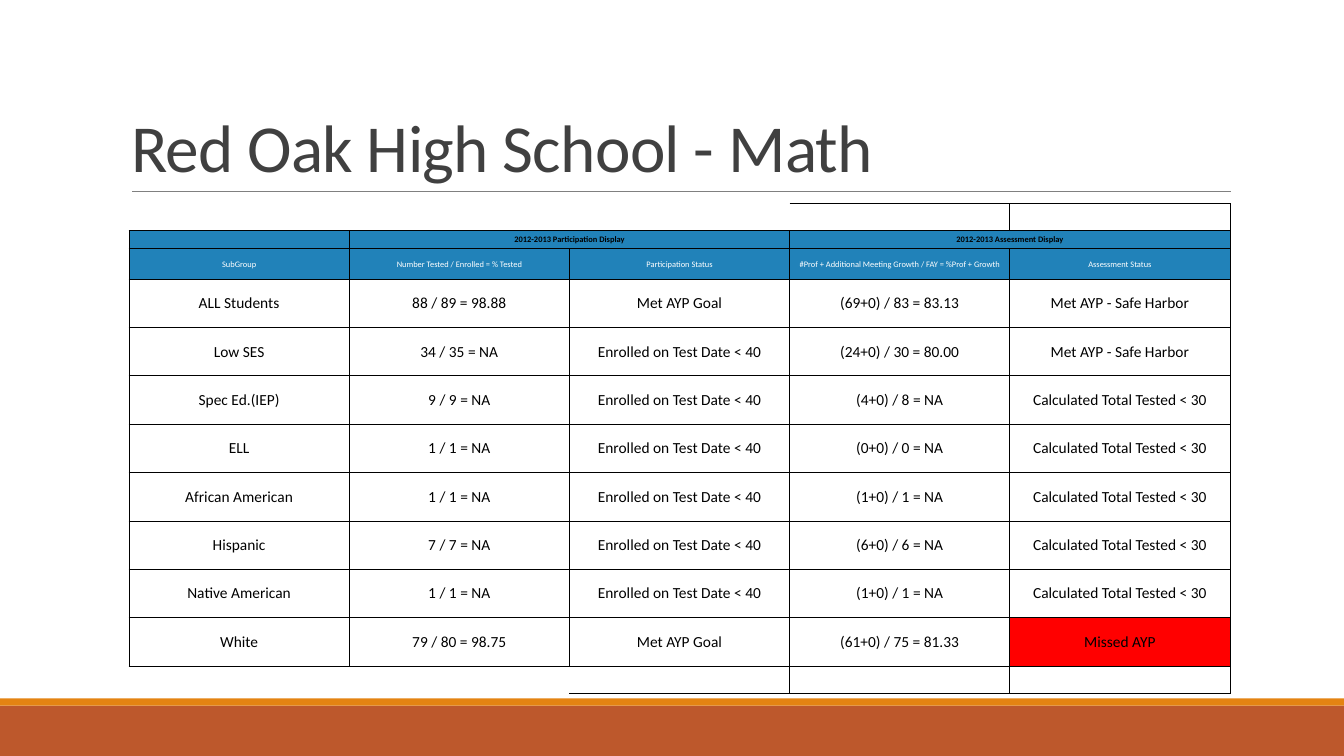
"""Build the Red Oak High School math results slide."""
import dataclasses
import typing

import lxml.etree
import pptx
import pptx.dml.color
import pptx.enum.shapes
import pptx.enum.text
import pptx.oxml.ns
import pptx.util

Inches = pptx.util.Inches
Pt = pptx.util.Pt
qn = pptx.oxml.ns.qn
ALIGN = pptx.enum.text.PP_ALIGN
ANCHOR = pptx.enum.text.MSO_ANCHOR

COLORS = {
    "rust": "BD582C", "orange": "E48312", "rule": "808080", "title": "404040",
    "header": "2182B9", "black": "000000", "white": "FFFFFF", "missed": "FF0000",
}
TITLE_FONT = {"name": "Calibri", "size": Pt(48), "bold": False}
GROUP_FONT = {"name": "Calibri", "size": Pt(6), "bold": True}
HEADER_FONT = {"name": "Calibri", "size": Pt(6), "bold": False}
BODY_FONT = {"name": "Calibri", "size": Pt(11), "bold": False}
TITLE_FRAME = {
    "word_wrap": True, "vertical_anchor": ANCHOR.BOTTOM,
    "auto_size": pptx.enum.text.MSO_AUTO_SIZE.NONE,
}
CELL_FORMAT = {
    "margin_left": Inches(0.06), "margin_right": Inches(0.06),
    "margin_top": Inches(0.03), "margin_bottom": Inches(0.03),
    "vertical_anchor": ANCHOR.MIDDLE,
}
NO_STYLE = "{2D5ABB26-0587-4C30-8999-92F81FD0307C}"
SMALL, TALL = 0.27, 0.48
FEW_ENROLLED = "Enrolled on Test Date < 40"
FEW_TESTED = "Calculated Total Tested < 30"
MET, HARBOR, MISSED = "Met AYP Goal", "Met AYP - Safe Harbor", "Missed AYP"


@dataclasses.dataclass(frozen=True)
class Bar:
    """A full-width footer band."""
    top: float
    height: float
    color: str


@dataclasses.dataclass(frozen=True)
class Row:
    """One table row with its shared format."""
    height: float
    texts: tuple[str, ...] = ("",) * 5
    font: dict[str, typing.Any] = dataclasses.field(default_factory=lambda: HEADER_FONT)
    color: str = "black"
    fill: str | None = None
    sides: tuple[str, ...] = ("LRTB",) * 5
    spans: tuple[tuple[int, int], ...] = ()


BARS = (Bar(7, 0.5, "rust"), Bar(6.93, 0.07, "orange"))
RESULTS = (
    ("ALL Students", "88 / 89 = 98.88", MET, "(69+0) / 83 = 83.13", HARBOR),
    ("Low SES", "34 / 35 = NA", FEW_ENROLLED, "(24+0) / 30 = 80.00", HARBOR),
    ("Spec Ed.(IEP)", "9 / 9 = NA", FEW_ENROLLED, "(4+0) / 8 = NA", FEW_TESTED),
    ("ELL", "1 / 1 = NA", FEW_ENROLLED, "(0+0) / 0 = NA", FEW_TESTED),
    ("African American", "1 / 1 = NA", FEW_ENROLLED, "(1+0) / 1 = NA", FEW_TESTED),
    ("Hispanic", "7 / 7 = NA", FEW_ENROLLED, "(6+0) / 6 = NA", FEW_TESTED),
    ("Native American", "1 / 1 = NA", FEW_ENROLLED, "(1+0) / 1 = NA", FEW_TESTED),
    ("White", "79 / 80 = 98.75", MET, "(61+0) / 75 = 81.33", MISSED),
)
ROWS = (
    Row(SMALL, sides=("B", "B", "B", "TB", "LRTB"), spans=((0, 2),)),
    Row(0.18, ("", "2012-2013 Participation Display", "", "2012-2013 Assessment Display", ""),
        GROUP_FONT, fill="header", spans=((1, 2), (3, 4))),
    Row(0.3, ("SubGroup", "Number Tested / Enrolled = % Tested", "Participation Status",
              "#Prof + Additional Meeting Growth / FAY = %Prof + Growth", "Assessment Status"),
        HEADER_FONT, "white", "header"),
    *(Row(TALL, texts, BODY_FONT, fill="white") for texts in RESULTS),
    Row(SMALL, sides=("T", "T", "RTB", "LRTB", "LRTB")),
)


def rgb(name: str) -> pptx.dml.color.RGBColor:
    """Look up a named colour."""
    return pptx.dml.color.RGBColor.from_string(COLORS[name])


def apply(target: typing.Any, values: dict[str, typing.Any]) -> None:
    """Set each format value on the target."""
    for name, value in values.items():
        setattr(target, name, value)


def add_bar(s: typing.Any, bar: Bar, width: int) -> None:
    """Draw a footer band."""
    sp = s.shapes.add_shape(pptx.enum.shapes.MSO_SHAPE.RECTANGLE,
                            0, Inches(bar.top), width, Inches(bar.height))
    sp.shadow.inherit = False
    sp.fill.solid()
    sp.fill.fore_color.rgb = rgb(bar.color)
    sp.line.fill.background()


def add_rule(s: typing.Any) -> None:
    """Draw the line under the title."""
    rule = s.shapes.add_connector(pptx.enum.shapes.MSO_CONNECTOR.STRAIGHT,
                                  Inches(1.31), Inches(1.9), Inches(12.21), Inches(1.9))
    rule.line.color.rgb = rgb("rule")
    rule.line.width = Pt(0.5)
    lxml.etree.SubElement(rule._element.spPr, qn("a:effectLst"))


def add_title(s: typing.Any, text: str) -> None:
    """Fill and format the title placeholder."""
    sp = s.shapes.title
    apply(sp, {"left": Inches(1.2), "top": Inches(0.31),
               "width": Inches(11), "height": Inches(1.59)})
    tf = sp.text_frame
    apply(tf, TITLE_FRAME)
    p = tf.paragraphs[0]
    apply(p, {"alignment": ALIGN.LEFT, "line_spacing": 0.85})
    r = p.add_run()
    r.text = text
    apply(r.font, TITLE_FONT)
    r.font.color.rgb = rgb("title")
    r._r.get_or_add_rPr().set("spc", "-50")


def set_borders(cell: typing.Any, sides: str) -> None:
    """Draw the listed cell sides and clear the others."""
    tc_pr = cell._tc.get_or_add_tcPr()
    for i, side in enumerate("LRTB"):
        ln = lxml.etree.Element(qn(f"a:ln{side}"), w=str(Pt(0.75)))
        if side in sides:
            fill = lxml.etree.SubElement(ln, qn("a:solidFill"))
            lxml.etree.SubElement(fill, qn("a:srgbClr"), val=COLORS["black"])
        else:
            lxml.etree.SubElement(ln, qn("a:noFill"))
        tc_pr.insert(i, ln)


def fill_cell(cell: typing.Any, row: Row, text: str, sides: str) -> None:
    """Write and format one table cell."""
    apply(cell, CELL_FORMAT)
    fill = "missed" if text == MISSED else row.fill
    if fill:
        cell.fill.solid()
        cell.fill.fore_color.rgb = rgb(fill)
    else:
        cell.fill.background()
    set_borders(cell, sides)
    p = cell.text_frame.paragraphs[0]
    p.alignment = ALIGN.CENTER
    if text:
        r = p.add_run()
        r.text = text
        apply(r.font, row.font)
        r.font.color.rgb = rgb(row.color)
    else:
        lxml.etree.SubElement(p._p, qn("a:endParaRPr"), sz="600")


def add_results(s: typing.Any) -> None:
    """Build the results table."""
    frame = s.shapes.add_table(len(ROWS), 5, Inches(1.28), Inches(2.02), Inches(10.92),
                               Inches(sum(row.height for row in ROWS)))
    table = frame.table
    apply(table, {"first_row": False, "horz_banding": False})
    table._tbl.tblPr.find(qn("a:tableStyleId")).text = NO_STYLE
    for i, row in enumerate(ROWS):
        table.rows[i].height = Inches(row.height)
        for j, (text, sides) in enumerate(zip(row.texts, row.sides)):
            fill_cell(table.cell(i, j), row, text, sides)
        for first, last in row.spans:
            table.cell(i, first).merge(table.cell(i, last))


def main() -> None:
    """Create and save the presentation."""
    prs = pptx.Presentation()
    apply(prs, {"slide_width": Inches(13.33), "slide_height": Inches(7.5)})
    s = prs.slides.add_slide(prs.slide_layouts[5])
    for bar in BARS:
        add_bar(s, bar, prs.slide_width)
    add_rule(s)
    add_title(s, "Red Oak High School - Math")
    add_results(s)
    prs.save("out.pptx")


if __name__ == "__main__":
    main()
